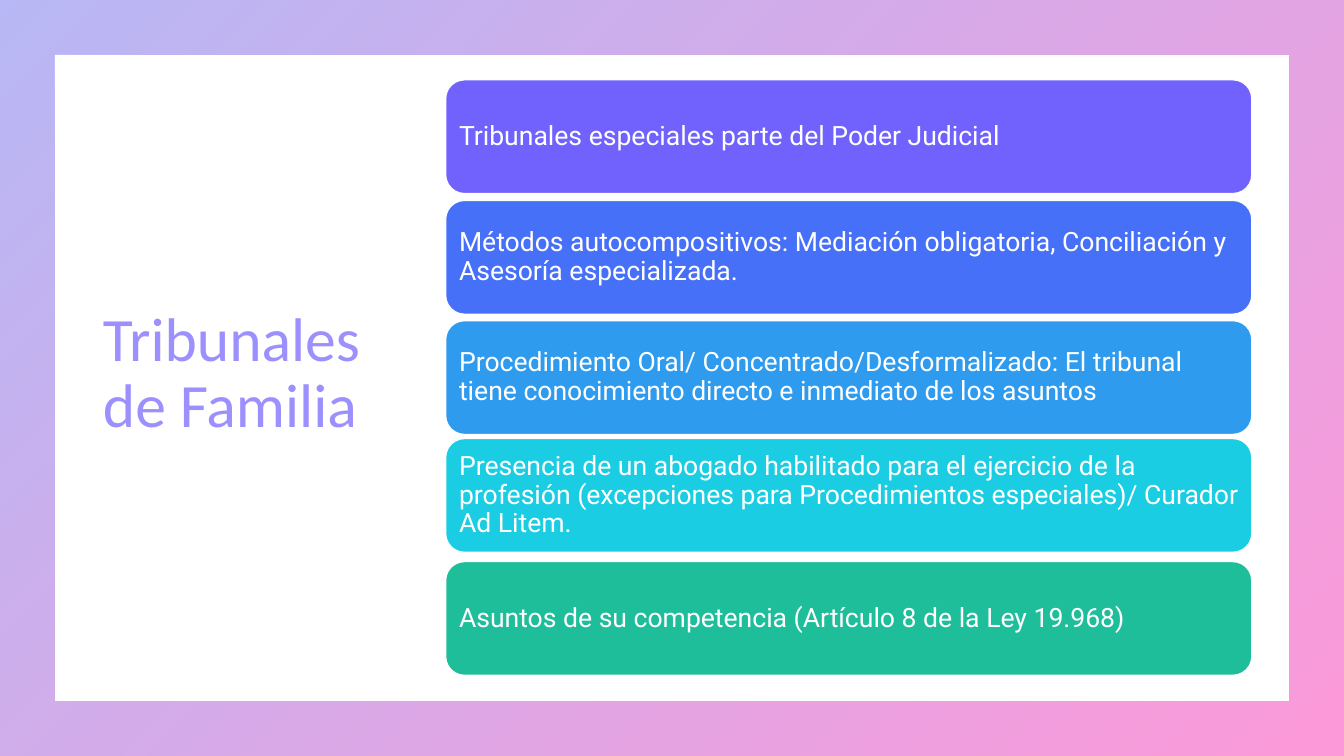
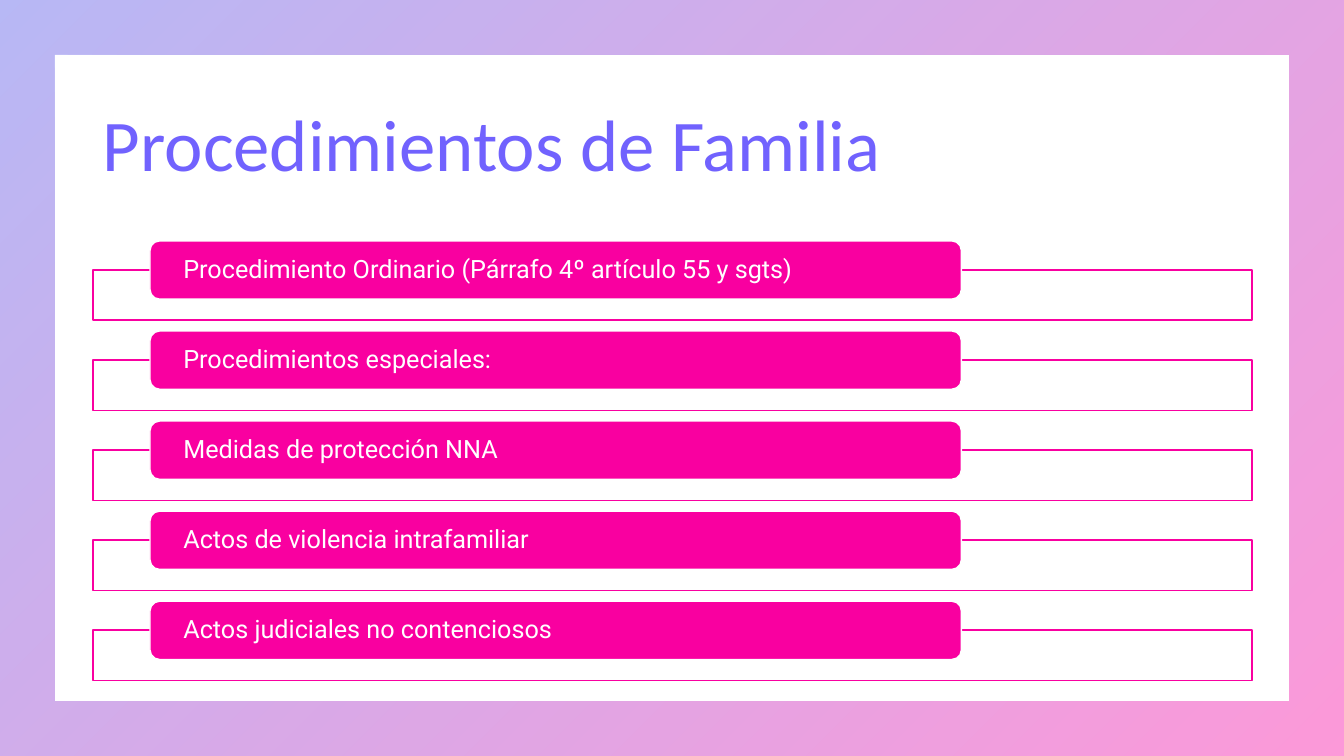
from pptx import Presentation
from pptx.dml.color import RGBColor
from pptx.enum.shapes import MSO_SHAPE
from pptx.enum.text import MSO_ANCHOR, MSO_AUTO_SIZE, PP_ALIGN
from pptx.oxml.ns import qn
from pptx.util import Cm, Pt
from lxml import etree

FRAME, RECTANGLE, ROUNDED = MSO_SHAPE.FRAME, MSO_SHAPE.RECTANGLE, MSO_SHAPE.ROUNDED_RECTANGLE
MIDDLE, LEFT, NO_AUTOFIT = MSO_ANCHOR.MIDDLE, PP_ALIGN.LEFT, MSO_AUTO_SIZE.NONE

COLORS = {
    "white": "FFFFFF", "indigo": "4D4EE6", "pink": "F900A0", "violet": "7162FE",
    "blue": "4770F8", "sky": "2F9BEF", "cyan": "1ACDE3", "green": "1EBE9B",
}
RGB = {name: RGBColor.from_string(value) for name, value in COLORS.items()}
TITLE_FONT, BODY_FONT = "Calibri", "Roboto"
WIDTH, HEIGHT = 33.87, 19.05
MARGIN, CONTENT_WIDTH = 2.34, 29.21

TITLES = [
    # text, top, width, height, size, opacity of the first colour
    ("Tribunales de Familia", 1.7, 8.89, 15.47, 44, 70),
    ("Procedimientos de Familia", 1.88, CONTENT_WIDTH, 3.68, 52, 100),
]
CARDS = [
    ("violet", 2.01, "Tribunales especiales parte del Poder Judicial"),
    ("blue", 5.05, "Métodos autocompositivos: Mediación obligatoria, Conciliación y "
                   "Asesoría especializada."),
    ("sky", 8.08, "Procedimiento Oral/ Concentrado/Desformalizado: El tribunal tiene "
                  "conocimiento directo e inmediato de los asuntos"),
    ("cyan", 11.05, "Presencia de un abogado habilitado para el ejercicio de la profesión "
                    "(excepciones para Procedimientos especiales)/ Curador Ad Litem."),
    ("green", 14.15, "Asuntos de su competencia (Artículo 8 de la Ley 19.968)"),
]
PROCEDURES = [
    "Procedimiento Ordinario (Párrafo 4º artículo 55 y sgts)",
    "Procedimientos especiales:",
    "Medidas de protección NNA",
    "Actos de violencia intrafamiliar",
    "Actos judiciales no contenciosos",
]


def set_opacity(shape, *percentages):
    """Apply opacities to the shape's colours, in document order."""
    for color, percentage in zip(list(shape.element.iter(qn("a:srgbClr"))), percentages):
        etree.SubElement(color, qn("a:alpha")).set("val", str(percentage * 1000))


def add_box(slide, preset, box, fill, line, text="", size=18, inset=(0, 0)):
    """Add a filled, outlined shape with left-aligned text; lengths in cm."""
    shape = slide.shapes.add_shape(preset, *map(Cm, box))
    shape.shadow.inherit = False
    shape.fill.solid()
    shape.fill.fore_color.rgb = RGB[fill]
    shape.line.color.rgb = RGB[line]
    shape.line.width = Pt(1)
    if text:
        frame = shape.text_frame
        frame.word_wrap = True
        frame.vertical_anchor = MIDDLE
        frame.margin_left = frame.margin_right = Cm(inset[0])
        frame.margin_top = frame.margin_bottom = Cm(inset[1])
        paragraph = frame.paragraphs[0]
        paragraph.alignment = LEFT
        paragraph.line_spacing = 0.9
        run = paragraph.add_run()
        run.text = text
        run.font.name = BODY_FONT
        run.font.size = Pt(size)
        run.font.color.rgb = RGB["white"]
    return shape


presentation = Presentation()
presentation.slide_width, presentation.slide_height = Cm(WIDTH), Cm(HEIGHT)
layout = presentation.slide_layouts.get_by_name("Title Only")
courts, procedures = [presentation.slides.add_slide(layout) for _ in TITLES]

# The gradient border is drawn once and moved into the shared layout.
border = courts.shapes.add_shape(FRAME, 0, 0, Cm(WIDTH), Cm(HEIGHT))
border.adjustments[0] = 0.07206
border.shadow.inherit = False
border.line.fill.background()
border.fill.gradient()
border.fill.gradient_angle = 315
for stop, color in zip(border.fill.gradient_stops, ("indigo", "pink")):
    stop.color.rgb = RGB[color]
set_opacity(border, 40, 40)
border.element.find(".//" + qn("p:cNvPr")).set("id", "20")
layout.shapes.element.insert(2, border.element)

for slide, (text, top, width, height, size, opacity) in zip((courts, procedures), TITLES):
    title = slide.shapes.title
    title.left, title.top, title.width, title.height = map(Cm, (MARGIN, top, width, height))
    title.text_frame.auto_size = NO_AUTOFIT
    title.text_frame.vertical_anchor = MIDDLE
    paragraph = title.text_frame.paragraphs[0]
    paragraph.alignment = LEFT
    paragraph.line_spacing = 0.9
    run = paragraph.add_run()
    run.text = text
    run.font.name = TITLE_FONT
    run.font.size = Pt(size)
    run.font.fill.gradient()
    run.font.fill.gradient_angle = 0
    for stop, color in zip(run.font.fill.gradient_stops, ("violet", "pink")):
        stop.color.rgb = RGB[color]
    set_opacity(title, opacity, 70)

for color, top, text in CARDS:
    add_box(courts, ROUNDED, (11.23, top, 20.32, 2.87), color, "white", text, 19, (0.2, 0.2))

for index, text in enumerate(PROCEDURES):
    top = 6.07 + index * 2.27
    outline = add_box(procedures, RECTANGLE, (MARGIN, top + 0.73, CONTENT_WIDTH, 1.27),
                      "white", "pink")
    set_opacity(outline, 90)
    add_box(procedures, ROUNDED, (3.78, top, 20.45, 1.47), "pink", "white", text, 18, (0.77, 0))

presentation.save("out.pptx")
